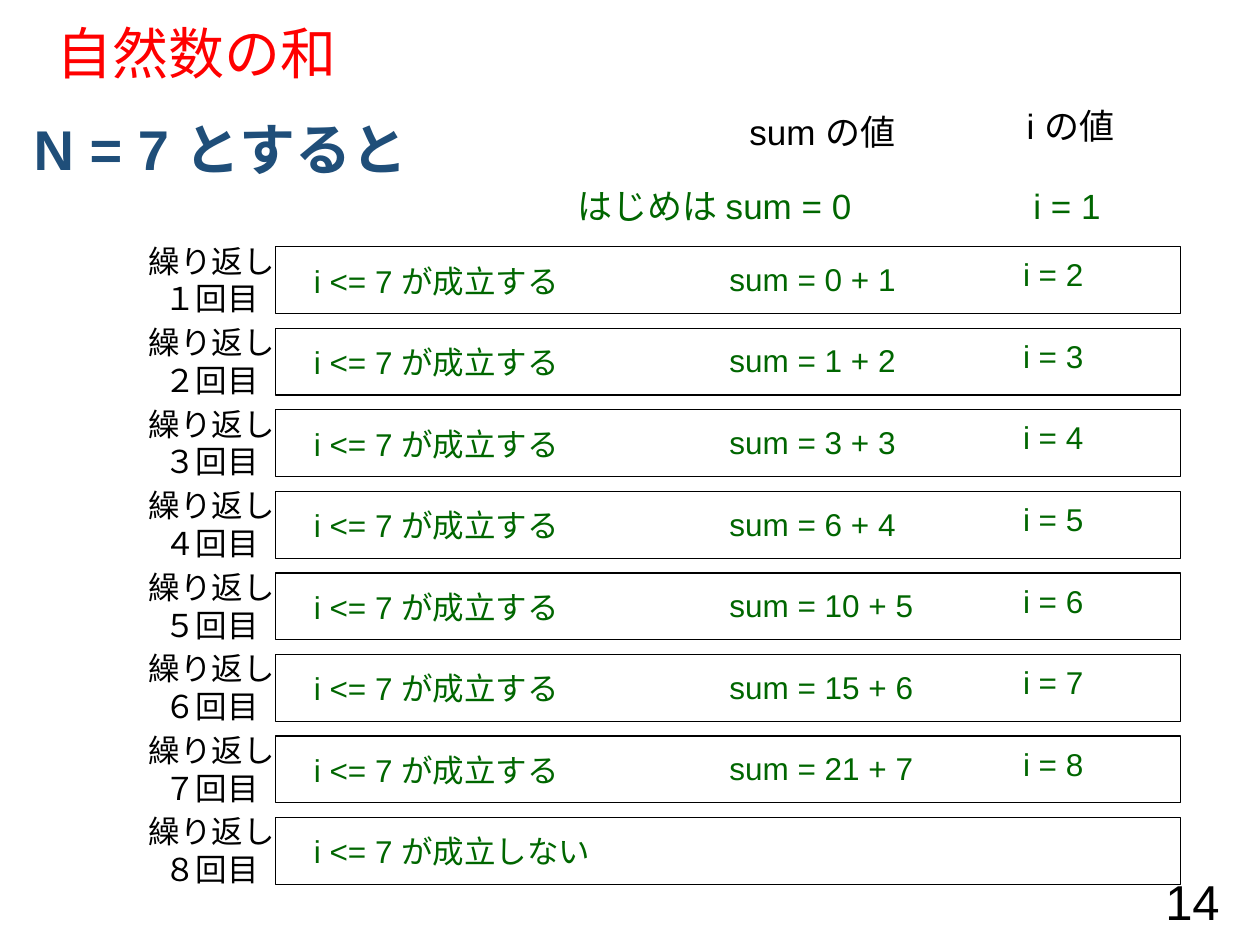
from lxml.etree import SubElement
from pptx import Presentation
from pptx.dml.color import RGBColor
from pptx.enum.shapes import MSO_SHAPE
from pptx.enum.text import MSO_ANCHOR, MSO_AUTO_SIZE, PP_ALIGN
from pptx.oxml.ns import qn
from pptx.util import Pt

COLORS = {
    "title": "FF0000",
    "heading": "1F4E79",
    "value": "006600",
    "black": "000000",
}
FONT = "Arial"
LIMIT = 7
COUNT_DIGITS = "１２３４５６７８"
FIRST_ROW_TOP = 141
ROW_PITCH = 46.6


def add_run(paragraph, text, size, color, bold=False):
    run = paragraph.add_run()
    run.text = text
    run.font.name = FONT
    run.font.size = Pt(size)
    run.font.bold = bold
    run.font.color.rgb = RGBColor.from_string(COLORS[color])


def add_title(slide, text):
    title = slide.shapes.title
    title.left, title.top, title.width, title.height = Pt(25.2), Pt(13.7), Pt(666), Pt(36.7)
    frame = title.text_frame
    frame.auto_size = MSO_AUTO_SIZE.NONE
    frame.vertical_anchor = MSO_ANCHOR.MIDDLE
    paragraph = frame.paragraphs[0]
    paragraph.alignment = PP_ALIGN.LEFT
    paragraph.line_spacing = 0.9
    add_run(paragraph, text, 32, "title")


def add_text(slide, lines, left, top, width, height=28.8, size=18,
             color="value", align=PP_ALIGN.LEFT, bold=False):
    """Add an unwrapped text box with one paragraph per line and return it."""
    box = slide.shapes.add_textbox(Pt(left), Pt(top), Pt(width), Pt(height))
    frame = box.text_frame
    frame.word_wrap = False
    for index, line in enumerate(lines):
        paragraph = frame.add_paragraph() if index else frame.paragraphs[0]
        paragraph.alignment = align
        add_run(paragraph, line, size, color, bold)
    return box


def add_tab_stop(paragraph, position):
    tabs = SubElement(paragraph._p.get_or_add_pPr(), qn("a:tabLst"))
    SubElement(tabs, qn("a:tab"), pos=str(Pt(position)), algn="l")


def add_frame(slide, top):
    shape = slide.shapes.add_shape(
        MSO_SHAPE.RECTANGLE, Pt(157.5), Pt(top), Pt(517), Pt(38.2))
    shape.shadow.inherit = False
    shape.fill.background()
    shape.line.color.rgb = RGBColor.from_string(COLORS["black"])
    shape.line.width = Pt(0.75)


def add_iteration(slide, i, total):
    """Add the row for loop counter i, where total is the sum so far."""
    top = FIRST_ROW_TOP + (i - 1) * ROW_PITCH
    holds = i <= LIMIT
    add_frame(slide, top)
    add_text(slide, ["繰り返し", f"{COUNT_DIGITS[i - 1]}回目"], 76, top - 6.5, 90,
             height=51, color="black", align=PP_ALIGN.CENTER)
    ending = "する" if holds else "しない"
    add_text(slide, [f"i <= {LIMIT} が成立{ending}"], 172.3, top + 5,
             170 if holds else 190)
    if holds:
        add_text(slide, [f"sum = {total} + {i}"], 409.7, top + 4,
                 112 if total < 10 else 122)
        add_text(slide, [f"i = {i + 1}"], 577.5, top + 1.4, 54)


def add_headings(slide):
    add_text(slide, [f"N = {LIMIT} とすると"], 12.2, 62, 255, height=46,
             size=32, color="heading", bold=True)
    add_text(slide, ["sum の値"], 415, 59.8, 110, size=20,
             color="black", align=PP_ALIGN.CENTER)
    add_text(slide, ["i の値"], 573.7, 56.2, 76, size=20,
             color="black", align=PP_ALIGN.CENTER)
    start = add_text(slide, ["はじめは sum = 0\ti = 1"], 323, 101.8, 330, size=20)
    add_tab_stop(start.text_frame.paragraphs[0], 260.5)


def add_page_number(slide, number):
    box = add_text(slide, [str(number)], 542, 500.4, 162, size=28,
                   color="black", align=PP_ALIGN.RIGHT)
    box.text_frame.word_wrap = True
    box.text_frame.vertical_anchor = MSO_ANCHOR.MIDDLE


def main():
    presentation = Presentation()
    presentation.slide_width, presentation.slide_height = Pt(720), Pt(540)
    slide = presentation.slides.add_slide(presentation.slide_layouts[5])
    add_title(slide, "自然数の和")
    add_page_number(slide, 14)
    add_headings(slide)
    total = 0
    for i in range(1, LIMIT + 2):
        add_iteration(slide, i, total)
        total += i
    presentation.save("out.pptx")


if __name__ == "__main__":
    main()
